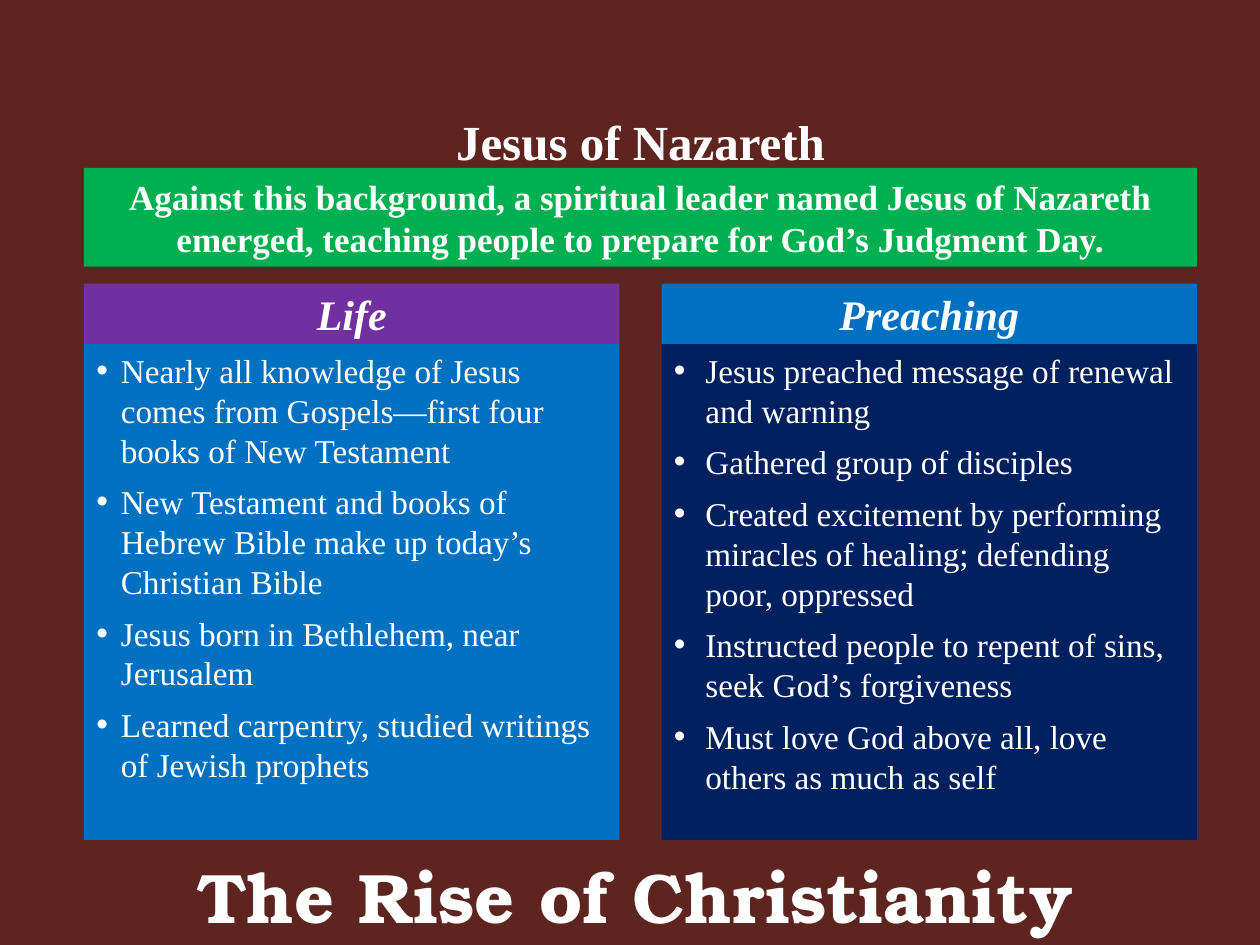
from lxml import etree
from pptx import Presentation
from pptx.dml.color import RGBColor
from pptx.enum.shapes import MSO_SHAPE as SHAPE
from pptx.enum.text import MSO_ANCHOR as ANCHOR, PP_ALIGN as ALIGN
from pptx.oxml.ns import qn
from pptx.util import Pt

BROWN = RGBColor(0x5E, 0x24, 0x20)
GREEN = RGBColor(0x00, 0xB0, 0x50)
BLUE = RGBColor(0x00, 0x70, 0xC0)
PURPLE = RGBColor(0x70, 0x30, 0xA0)
NAVY = RGBColor(0x00, 0x20, 0x60)
WHITE = RGBColor(0xFF, 0xFF, 0xFF)
SERIF, DISPLAY = "Times New Roman", "TeX Gyre Bonum"

TITLE = "Jesus of Nazareth"
BANNER = ("Against this background, a spiritual leader named Jesus of Nazareth "
          "emerged, teaching people to prepare for God’s Judgment Day.")
FOOTER = "The Rise of Christianity"
COLUMNS = [
    dict(head="Life", head_fill=PURPLE, body_fill=BLUE, indent=14, points=[
        "Nearly all knowledge of Jesus comes from Gospels—first four books of New Testament",
        "New Testament and books of Hebrew Bible make up today’s Christian Bible",
        "Jesus born in Bethlehem, near Jerusalem",
        "Learned carpentry, studied writings of Jewish prophets",
    ]),
    dict(head="Preaching", head_fill=BLUE, body_fill=NAVY, indent=18, points=[
        "Jesus preached message of renewal and warning",
        "Gathered group of disciples",
        "Created excitement by performing miracles of healing; defending poor, oppressed",
        "Instructed people to repent of sins, seek God’s forgiveness",
        "Must love God above all, love others as much as self",
    ]),
]

LEFT, WIDTH, GAP = 48, 636, 24
COL_W = (WIDTH - GAP) / 2
HEAD_TOP, BODY_TOP, BODY_BOTTOM = 162, 196.5, 480


def add_bullet(p, indent):
    pPr = p._p.get_or_add_pPr()
    pPr.set("marL", str(Pt(indent)))
    pPr.set("indent", str(-Pt(indent)))
    etree.SubElement(pPr, qn("a:buFont")).set("typeface", "Arial")
    etree.SubElement(pPr, qn("a:buChar")).set("char", "•")


def add_text(shapes, lines, box, fill=None, size=20, font=SERIF, bold=False,
             italic=False, align=ALIGN.CENTER, anchor=ANCHOR.MIDDLE,
             indent=0, after=0):
    """Add a filled rectangle, or a plain text box when fill is None."""
    box = [Pt(v) for v in box]
    if fill is None:
        sp = shapes.add_textbox(*box)
    else:
        sp = shapes.add_shape(SHAPE.RECTANGLE, *box)
        sp.shadow.inherit = False
        sp.fill.solid()
        sp.fill.fore_color.rgb = fill
        sp.line.fill.background()
    tf = sp.text_frame
    tf.word_wrap = True
    tf.vertical_anchor = anchor
    for i, line in enumerate(lines):
        p = tf.paragraphs[0] if i == 0 else tf.add_paragraph()
        p.alignment = align
        p.space_after = Pt(after)
        if indent:
            add_bullet(p, indent)
        r = p.add_run()
        r.text = line
        r.font.name, r.font.size = font, Pt(size)
        r.font.bold, r.font.italic = bold, italic
        r.font.color.rgb = WHITE


prs = Presentation()
prs.slide_width, prs.slide_height = Pt(720), Pt(540)
s = prs.slides.add_slide(prs.slide_layouts[6])
s.background.fill.solid()
s.background.fill.fore_color.rgb = BROWN

add_text(s.shapes, [FOOTER], (LEFT, 484.3, 630, 55.7), size=40, font=DISPLAY,
         bold=True, anchor=ANCHOR.TOP)
add_text(s.shapes, [BANNER], (LEFT, 96, WIDTH, 56.4), fill=GREEN, bold=True)
for i, col in enumerate(COLUMNS):
    x = LEFT + i * (COL_W + GAP)
    group = s.shapes.add_group_shape()
    add_text(group.shapes, col["points"],
             (x, BODY_TOP, COL_W, BODY_BOTTOM - BODY_TOP),
             fill=col["body_fill"], size=19, align=ALIGN.LEFT,
             anchor=ANCHOR.TOP, indent=col["indent"], after=6.7)
    add_text(group.shapes, [col["head"]],
             (x, HEAD_TOP, COL_W, BODY_TOP - HEAD_TOP),
             fill=col["head_fill"], size=24, bold=True, italic=True)
add_text(s.shapes, [TITLE], (54, 60, 624, 42), size=28, bold=True,
         anchor=ANCHOR.TOP)

prs.save("out.pptx")
